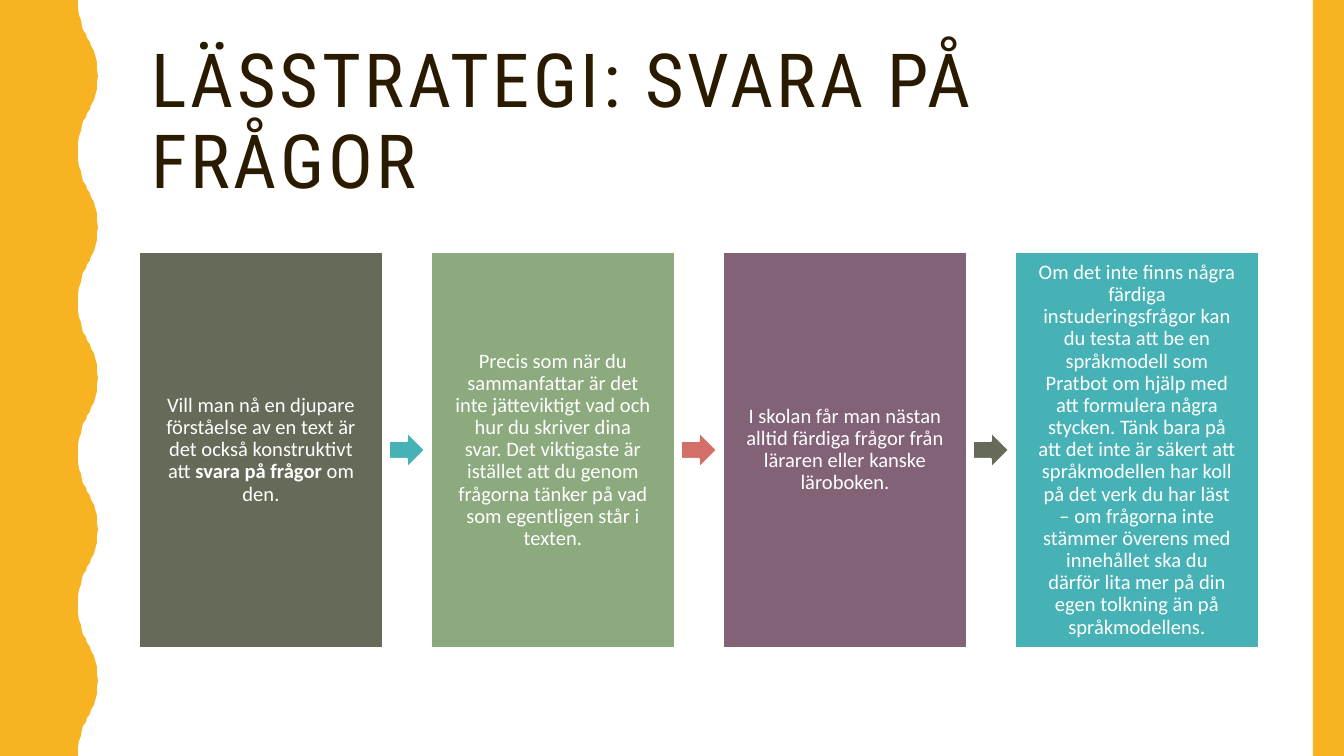
from pptx import Presentation
from pptx.dml.color import RGBColor
from pptx.enum.shapes import MSO_SHAPE
from pptx.enum.text import MSO_ANCHOR, PP_ALIGN
from pptx.util import Pt

PX = 914400 / 134.4
WIDTH, HEIGHT = 1344, 756
YELLOW, DARK, WHITE = "F8B323", "2A1A00", "FFFFFF"

# Content: title, then steps as (fill, runs of (text, bold))
TITLE = "LÄSSTRATEGI: SVARA PÅ FRÅGOR"
STEPS = [
    ("656A59", [
        ("Vill man nå en djupare förståelse av en text är det också konstruktivt att ", False),
        ("svara på frågor", True),
        (" om den.", False)]),
    ("8CAA7E", [
        ("Precis som när du sammanfattar är det inte jätteviktigt vad och hur du "
         "skriver dina svar. Det viktigaste är istället att du genom frågorna tänker "
         "på vad som egentligen står i texten.", False)]),
    ("826276", [
        ("I skolan får man nästan alltid färdiga frågor från läraren eller kanske "
         "läroboken.", False)]),
    ("46B2B5", [
        ("Om det inte finns några färdiga instuderingsfrågor kan du testa att be en "
         "språkmodell som Pratbot om hjälp med att formulera några stycken. Tänk bara "
         "på att det inte är säkert att språkmodellen har koll på det verk du har läst "
         "– om frågorna inte stämmer överens med innehållet ska du därför lita mer på "
         "din egen tolkning än på språkmodellens.", False)]),
]
ARROW_FILLS = ["46B2B5", "D36F68", "656A59"]

# Layout in px
TITLE_BOX = (138, 42, 1122, 164)
STEP_LEFT, STEP_TOP, STEP_WIDTH, STEP_HEIGHT = 139, 252, 244, 396
STEP_PITCH, STEP_INSET, ARROW_SIZE = 292, 23, 36
RIGHT_BAND = (1313, 0, 31, HEIGHT)
WAVE_COUNT = 5
HALF_WAVE = [(78, 0), (78, 8), (79, 15), (81, 20), (82, 26), (83, 30), (86, 34),
             (87, 38), (90, 42), (91, 46), (94, 51), (95, 55), (97, 62), (97, 69), (98, 76)]

TITLE_FORMAT = {"name": "Roboto Condensed", "size": Pt(40)}
STEP_FORMAT = {"name": "Calibri", "size": Pt(11)}


def emu(*lengths):
    return [round(length * PX) for length in lengths]


def color(value):
    return RGBColor.from_string(value)


def paint(shape, fill, line=None):
    shape.shadow.inherit = False
    shape.fill.solid()
    shape.fill.fore_color.rgb = color(fill)
    if line:
        shape.line.color.rgb = color(line)
        shape.line.width = Pt(1)
    else:
        shape.line.fill.background()


def add_block(page, kind, place, fill, line=None):
    shape = page.shapes.add_shape(kind, *emu(*place))
    paint(shape, fill, line)
    return shape


def write(shape, runs, font_format, ink, align):
    frame = shape.text_frame
    frame.word_wrap = True
    frame.vertical_anchor = MSO_ANCHOR.MIDDLE
    para = frame.paragraphs[0]
    para.alignment = align
    para.line_spacing = 0.9
    for text, bold in runs:
        span = para.add_run()
        span.text = text
        for name, value in {**font_format, "bold": bold}.items():
            setattr(span.font, name, value)
        span.font.color.rgb = color(ink)
    return para


def wave_points():
    period = HEIGHT / WAVE_COUNT
    mirrored = [(x, period - y) for x, y in reversed(HALF_WAVE[1:-1])]
    for wave in range(WAVE_COUNT):
        for x, y in HALF_WAVE + mirrored:
            yield x, wave * period + y


deck = Presentation()
deck.slide_width, deck.slide_height = emu(WIDTH, HEIGHT)
page = deck.slides.add_slide(deck.slide_layouts[6])

# Wavy left band and straight right band
builder = page.shapes.build_freeform(0, 0, scale=1.0)
edge = [*wave_points(), (HALF_WAVE[0][0], HEIGHT), (0, HEIGHT)]
builder.add_line_segments([emu(*point) for point in edge], close=True)
paint(builder.convert_to_shape(), YELLOW)
add_block(page, MSO_SHAPE.RECTANGLE, RIGHT_BAND, YELLOW)

# Title
title = page.shapes.add_textbox(*emu(*TITLE_BOX))
heading = write(title, [(TITLE, False)], TITLE_FORMAT, DARK, PP_ALIGN.LEFT)
heading.runs[0].font._element.set("spc", "200")

# Steps
for index, (fill, runs) in enumerate(STEPS):
    left = STEP_LEFT + index * STEP_PITCH
    box = add_block(page, MSO_SHAPE.RECTANGLE,
                    (left, STEP_TOP, STEP_WIDTH, STEP_HEIGHT), fill, WHITE)
    for side in ("left", "top", "right", "bottom"):
        setattr(box.text_frame, f"margin_{side}", emu(STEP_INSET)[0])
    write(box, runs, STEP_FORMAT, WHITE, PP_ALIGN.CENTER)

# Arrows, centred in the gaps between steps
gap = STEP_PITCH - STEP_WIDTH
arrow_top = STEP_TOP + (STEP_HEIGHT - ARROW_SIZE) / 2
for index, fill in enumerate(ARROW_FILLS):
    left = STEP_LEFT + index * STEP_PITCH + STEP_WIDTH + (gap - ARROW_SIZE) / 2
    add_block(page, MSO_SHAPE.RIGHT_ARROW,
              (left, arrow_top, ARROW_SIZE, ARROW_SIZE), fill, WHITE)

deck.save("out.pptx")
